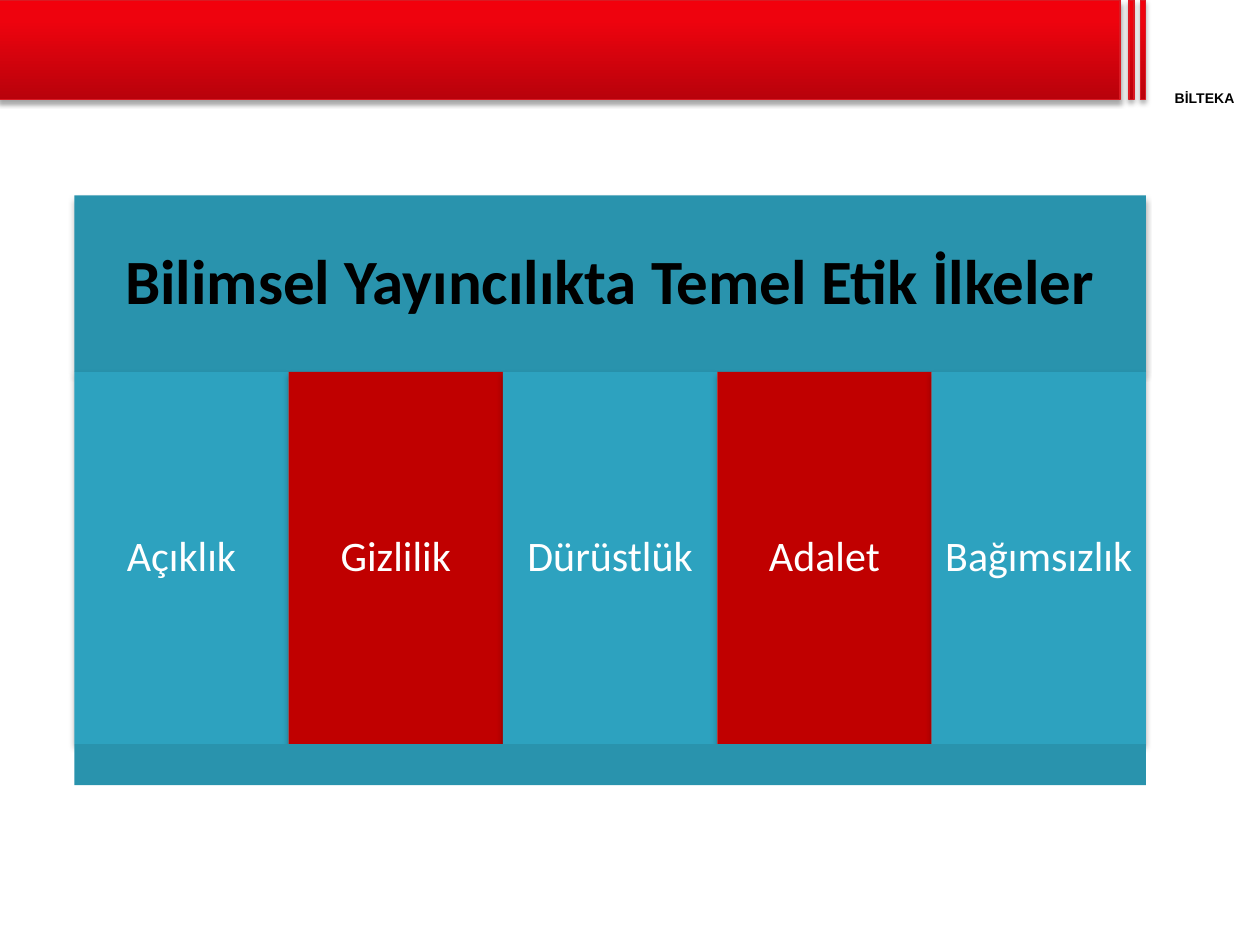
from copy import deepcopy

from lxml import etree
from pptx import Presentation
from pptx.dml.color import RGBColor
from pptx.enum.shapes import MSO_SHAPE as SHAPE
from pptx.enum.text import MSO_ANCHOR as ANCHOR, MSO_AUTO_SIZE as AUTO, PP_ALIGN as ALIGN
from pptx.oxml.ns import qn
from pptx.util import Cm, Pt

BLACK = RGBColor(0x00, 0x00, 0x00)
WHITE = RGBColor(0xFF, 0xFF, 0xFF)
DARK_TEAL = RGBColor(0x29, 0x93, 0xAD)
TEAL = RGBColor(0x2D, 0xA2, 0xBF)
RED = RGBColor(0xC0, 0x00, 0x00)
RIBBON_LINE = RGBColor(0xDA, 0x1A, 0x23)
RIBBON_STOPS = [
    (0, RGBColor(0xB8, 0x02, 0x0B)),
    (0.8, RGBColor(0xEE, 0x03, 0x0E)),
    (1, RGBColor(0xF2, 0x00, 0x0C)),
]


def add_shadow(sp, alpha, blur, dist):
    """Give the shape a soft shadow straight below it."""
    sp.shadow.inherit = False
    effects = sp._element.spPr.find(qn("a:effectLst"))
    shadow = etree.SubElement(effects, qn("a:outerShdw"), blurRad=str(Pt(blur)),
                              dist=str(Pt(dist)), dir="5400000", rotWithShape="0")
    color = etree.SubElement(shadow, qn("a:srgbClr"), val="000000")
    etree.SubElement(color, qn("a:alpha"), val=str(alpha * 1000))


def write_text(sp, text, font, size, color, bold, inset):
    """Put one centred line of text into the shape."""
    tf = sp.text_frame
    tf.word_wrap = True
    tf.auto_size = AUTO.NONE
    tf.vertical_anchor = ANCHOR.MIDDLE
    tf.margin_left = tf.margin_right = tf.margin_top = tf.margin_bottom = Cm(inset)
    p = tf.paragraphs[0]
    p.alignment = ALIGN.CENTER
    p.line_spacing = 0.9
    r = p.add_run()
    r.text = text
    r.font.name = font
    r.font.size = Pt(size)
    r.font.bold = bold
    r.font.color.rgb = color


prs = Presentation()
prs.slide_width, prs.slide_height = Cm(25.4), Cm(19.05)
s = prs.slides.add_slide(prs.slide_layouts[5])

# Red ribbon and its two thin stripes
for left, width in [(-0.05, 22.63), (22.76, 0.1), (22.99, 0.1)]:
    sp = s.shapes.add_shape(SHAPE.RECTANGLE, Cm(left), 0, Cm(width), Cm(2.01))
    sp.fill.gradient()
    sp.fill.gradient_angle = 90
    stop_list = sp._element.spPr.find(".//" + qn("a:gsLst"))
    stop_list.append(deepcopy(stop_list[-1]))
    for stop, (position, color) in zip(sp.fill.gradient_stops, RIBBON_STOPS):
        stop.position = position
        stop.color.rgb = color
    sp.line.color.rgb = RIBBON_LINE
    sp.line.width = Pt(0.75)
    add_shadow(sp, 35, 3.1, 1.8)

# Institution label
sp = s.shapes.add_textbox(Cm(22.99), Cm(1.83), Cm(2.59), Cm(0.33))
write_text(sp, "BİLTEKA", "Arial", 8, BLACK, True, 0)

# Panel geometry
LEFT, WIDTH = 1.5, 21.6
TITLE_TOP, COLUMN_TOP, FOOT_TOP = 3.94, 7.5, 15

# Title band
title = s.shapes.title
title.left, title.top = Cm(LEFT), Cm(TITLE_TOP)
title.width, title.height = Cm(WIDTH), Cm(COLUMN_TOP - TITLE_TOP)
title.fill.solid()
title.fill.fore_color.rgb = DARK_TEAL
title.line.fill.background()
add_shadow(title, 32, 3.5, 2.2)
write_text(title, "Bilimsel Yayıncılıkta Temel Etik İlkeler", "Calibri", 36, BLACK, True, 0.38)

# One column per principle, in alternating colours
principles = ["Açıklık", "Gizlilik", "Dürüstlük", "Adalet", "Bağımsızlık"]
column_width = WIDTH / len(principles)
for i, principle in enumerate(principles):
    sp = s.shapes.add_shape(SHAPE.RECTANGLE, Cm(LEFT + i * column_width), Cm(COLUMN_TOP),
                            Cm(column_width), Cm(FOOT_TOP - COLUMN_TOP))
    sp.fill.solid()
    sp.fill.fore_color.rgb = RED if i % 2 else TEAL
    sp.line.fill.background()
    add_shadow(sp, 32, 3.5, 2.2)
    write_text(sp, principle, "Calibri", 24, WHITE, False, 0.25)

# Foot band
sp = s.shapes.add_shape(SHAPE.RECTANGLE, Cm(LEFT), Cm(FOOT_TOP), Cm(WIDTH), Cm(0.83))
sp.fill.solid()
sp.fill.fore_color.rgb = DARK_TEAL
sp.line.fill.background()
sp.shadow.inherit = False

prs.save("out.pptx")
